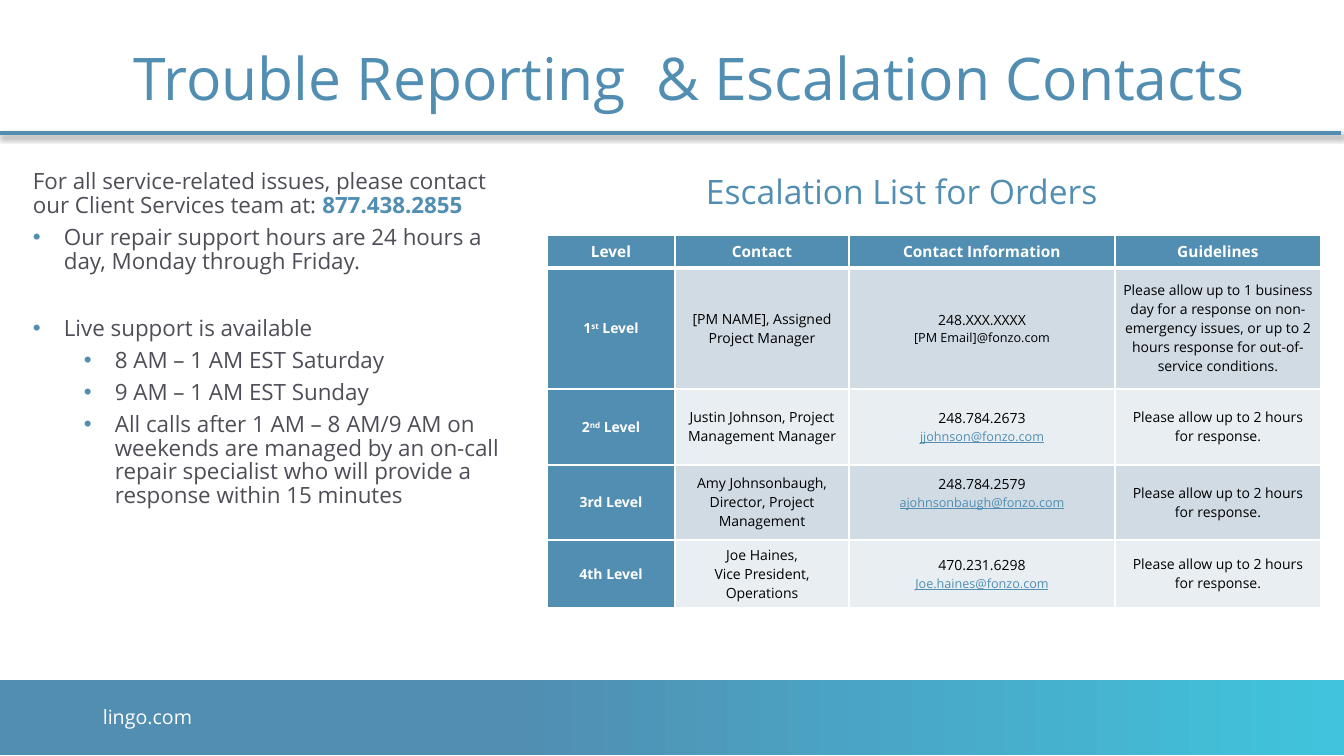
from lxml import etree
from pptx import Presentation
from pptx.dml.color import RGBColor as RGB
from pptx.enum.shapes import MSO_CONNECTOR as LINE, MSO_SHAPE as SHAPE
from pptx.enum.text import MSO_ANCHOR as ANCHOR, PP_ALIGN as ALIGN
from pptx.oxml.ns import qn
from pptx.util import Pt

PX = 914400 / 100.8
WIDE, HIGH = 1344, 756
FONT = "Open Sans"
COLORS = {
    "blue": "518EB2", "aqua": "40C4DD", "gray": "504D57", "white": "FFFFFF",
    "black": "000000", "dark": "D0DBE4", "light": "E9EEF2",
}

INTRO = "For all service-related issues, please contact our Client Services team at: "
PHONE = "877.438.2855"
# level, text, space after in points
POINTS = [
    (0, "Our repair support hours are 24 hours a day, Monday through Friday.", 31),
    (0, "Live support is available", 6),
    (1, "8 AM – 1 AM EST Saturday", 6),
    (1, "9 AM – 1 AM EST Sunday", 6),
    (1, "All calls after 1 AM – 8 AM/9 AM on weekends are managed by an on-call "
        "repair specialist who will provide a response within 15 minutes", 6),
]

COLS = [128, 174, 266, 206]
ROWS = [33, 121, 76, 75, 68]
HEADS = ["Level", "Contact", "Contact Information", "Guidelines"]
WAIT = "Please allow up to 2 hours for response."
# level parts (the second is raised), contact, phone, e-mail, guideline
STEPS = [
    (["1", "st", " Level"], ["[PM NAME], Assigned Project Manager"],
     "248.XXX.XXXX", "[PM Email]@fonzo.com",
     "Please allow up to 1 business day for a response on non-emergency issues, "
     "or up to 2 hours response for out-of-service conditions."),
    (["2", "nd", " Level"], ["Justin Johnson, Project Management Manager"],
     "248.784.2673", "jjohnson@fonzo.com", WAIT),
    (["3rd Level"], ["Amy Johnsonbaugh, Director, Project Management"],
     "248.784.2579", "ajohnsonbaugh@fonzo.com", WAIT),
    (["4th Level"], ["Joe Haines,", "Vice President, Operations"],
     "470.231.6298", "Joe.haines@fonzo.com", WAIT),
]


def px(num):
    return round(num * PX)


def rgb(name):
    return RGB.from_string(COLORS[name])


def node(base, tag, **attrs):
    """Append a DrawingML element and return it."""
    item = etree.SubElement(base, qn("a:" + tag))
    for key, val in attrs.items():
        item.set(key, str(val))
    return item


def style(font, size, color, bold=False, under=False):
    font.name, font.size, font.bold = FONT, Pt(size), bold
    font.underline = under
    font.color.rgb = rgb(color)


def add_box(slide, x, y, w, h, wrap=True):
    frame = slide.shapes.add_textbox(px(x), px(y), px(w), px(h)).text_frame
    frame.word_wrap = wrap
    return frame


def add_label(slide, box, text, size, color, wrap=True):
    frame = add_box(slide, *box, wrap)
    para = frame.paragraphs[0]
    para.text = text
    style(para.font, size, color)
    return frame


def add_title(slide, x, y, w, h):
    frame = add_label(slide, (x, y, w, h),
                      "Trouble Reporting  & Escalation Contacts", 42, "blue")
    frame.vertical_anchor = ANCHOR.MIDDLE
    frame.paragraphs[0].line_spacing = 0.9


def add_rule(slide, x, y, w):
    rule = slide.shapes.add_connector(LINE.STRAIGHT, px(x), px(y), px(x + w), px(y))
    rule.line.color.rgb = rgb("blue")
    rule.line.width = Pt(2.25)
    effects = node(rule._element.spPr, "effectLst")
    shade = node(effects, "outerShdw", blurRad=Pt(4), dist=Pt(3),
                 dir=45 * 60000, algn="tl", rotWithShape=0)
    node(node(shade, "srgbClr", val=COLORS["black"]), "alpha", val=40000)


def add_footer(slide, x, y, w, h):
    band = slide.shapes.add_shape(SHAPE.RECTANGLE, px(x), px(y), px(w), px(h))
    band.shadow.inherit = False
    band.line.fill.background()
    band.fill.gradient()
    band.fill.gradient_angle = 0
    for stop, place, color in zip(band.fill.gradient_stops, (0.38, 1), ("blue", "aqua")):
        stop.position = place
        stop.color.rgb = rgb(color)
    add_label(slide, (x + 93, y + 20, 254, 40), "lingo.com", 14, "white")


def set_bullet(para, level):
    props = para._p.get_or_add_pPr()
    props.set("marL", str(px(31 + 51 * level)))
    props.set("indent", str(px(-31)))
    node(node(props, "buClr"), "srgbClr", val=COLORS["blue"])
    node(props, "buFont", typeface="Arial")
    node(props, "buChar", char="•")


def add_support(slide, x, y, w, h):
    frame = add_box(slide, x, y, w, h)
    para = frame.paragraphs[0]
    para.line_spacing, para.space_after = 0.88, Pt(6)
    for text, color, bold in ((INTRO, "gray", False), (PHONE, "blue", True)):
        run = para.add_run()
        run.text = text
        style(run.font, 16, color, bold)
    for level, text, after in POINTS:
        para = frame.add_paragraph()
        para.text, para.level = text, level
        para.line_spacing, para.space_after = 0.88, Pt(after)
        set_bullet(para, level)
        style(para.font, 16, "gray")


def set_edges(cell, row):
    props = cell._tc.get_or_add_tcPr()
    heavy = {0: "lnB", 1: "lnT"}.get(row)
    for spot, tag in enumerate(("lnL", "lnR", "lnT", "lnB")):
        edge = etree.Element(qn("a:" + tag), w=str(Pt(3 if tag == heavy else 1)))
        node(node(edge, "solidFill"), "srgbClr", val=COLORS["white"])
        props.insert(spot, edge)


def fill_cell(cell, row, back, lines):
    """Write lines of (parts, size, color, bold, underline); a second part is raised."""
    cell.fill.solid()
    cell.fill.fore_color.rgb = rgb(back)
    set_edges(cell, row)
    cell.vertical_anchor = ANCHOR.MIDDLE
    cell.margin_left = cell.margin_right = px(8)
    cell.margin_top = cell.margin_bottom = 0
    frame = cell.text_frame
    for num, (parts, *look) in enumerate(lines):
        para = frame.add_paragraph() if num else frame.paragraphs[0]
        para.alignment = ALIGN.CENTER
        for spot, text in enumerate(parts):
            run = para.add_run()
            run.text = text
            if spot == 1:
                run._r.get_or_add_rPr().set("baseline", "30000")
        style(para.font, *look)


def add_orders(slide, x, y):
    """Place the escalation heading and its table."""
    add_label(slide, (x + 149, y, 430, 50), "Escalation List for Orders",
              24, "blue", wrap=False)
    table = slide.shapes.add_table(len(ROWS), len(COLS), px(x), px(y + 69),
                                   px(sum(COLS)), px(sum(ROWS))).table
    for col, wide in zip(table.columns, COLS):
        col.width = px(wide)
    for row, high in zip(table.rows, ROWS):
        row.height = px(high)
    for col, text in enumerate(HEADS):
        fill_cell(table.cell(0, col), 0, "blue", [([text], 11, "white", True)])
    for row, (level, names, phone, mail, guide) in enumerate(STEPS, 1):
        link = not mail.startswith("[")
        cells = [
            [(level, 10, "white", True)],
            [([name], 10, "black") for name in names],
            [([phone], 10, "black"),
             ([mail], 9, "blue" if link else "black", False, link)],
            [([guide], 10, "black")],
        ]
        back = "dark" if row % 2 else "light"
        for col, lines in enumerate(cells):
            fill_cell(table.cell(row, col), row, back if col else "blue", lines)
    table.cell(3, 2).margin_bottom = px(19)


def main():
    deck = Presentation()
    deck.slide_width, deck.slide_height = px(WIDE), px(HIGH)
    slide = deck.slides.add_slide(deck.slide_layouts[6])
    add_footer(slide, 0, 680, WIDE, 75)
    add_rule(slide, -3, 133, WIDE)
    add_title(slide, 124, 33, 1143, 97)
    add_support(slide, 23, 166, 506, 460)
    add_orders(slide, 547, 166)
    deck.save("out.pptx")


if __name__ == "__main__":
    main()
